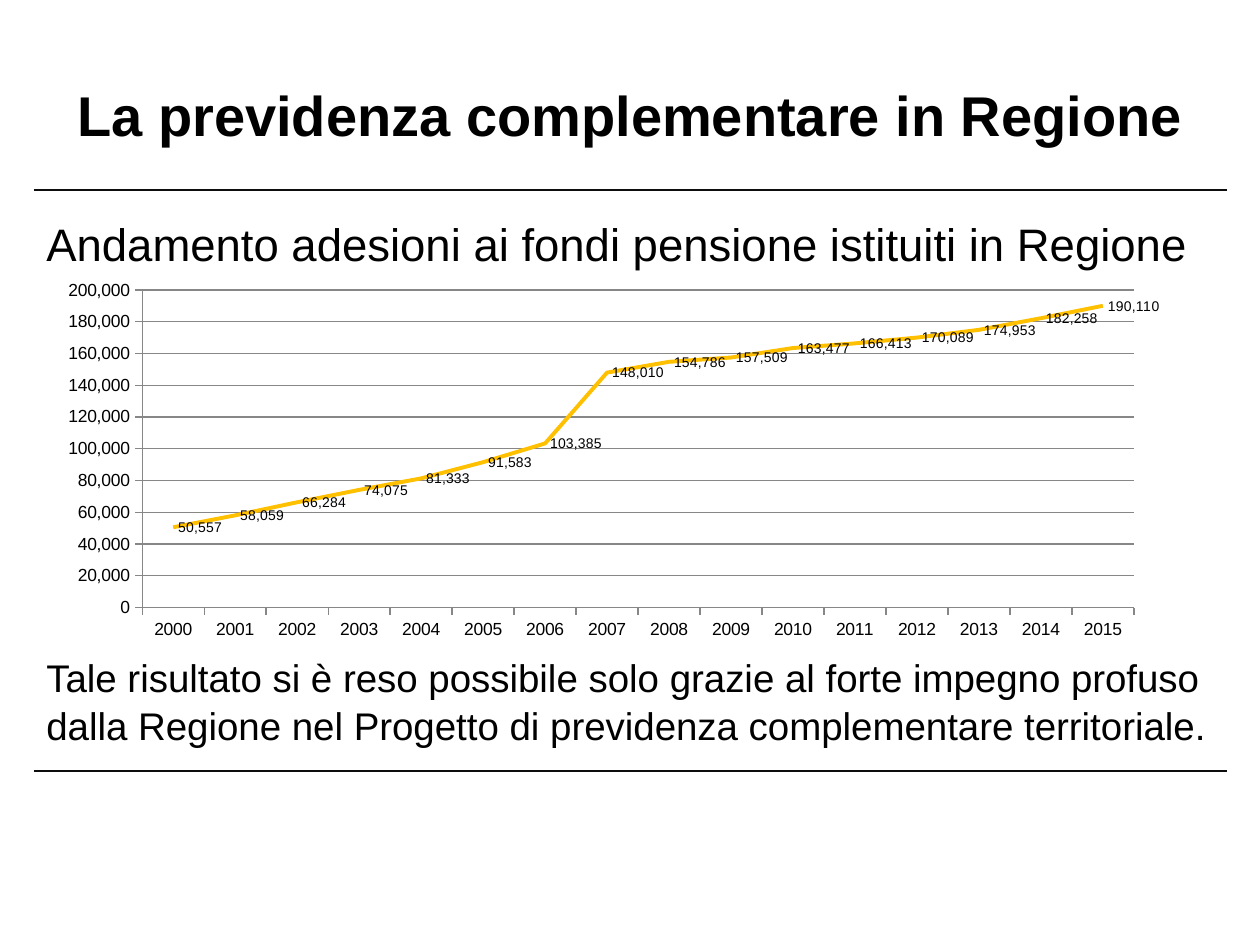
from lxml import etree
from pptx import Presentation
from pptx.chart.data import CategoryChartData
from pptx.dml.color import RGBColor
from pptx.enum.chart import XL_CHART_TYPE, XL_LABEL_POSITION, XL_MARKER_STYLE, XL_TICK_MARK
from pptx.enum.shapes import MSO_CONNECTOR
from pptx.enum.text import MSO_ANCHOR, PP_ALIGN
from pptx.oxml import parse_xml
from pptx.oxml.ns import nsdecls, qn
from pptx.util import Pt

LINE_CHART = XL_CHART_TYPE.LINE
LABEL_RIGHT = XL_LABEL_POSITION.RIGHT
NO_MARKER = XL_MARKER_STYLE.NONE
TICK_OUT = XL_TICK_MARK.OUTSIDE
STRAIGHT = MSO_CONNECTOR.STRAIGHT
TOP, MIDDLE = MSO_ANCHOR.TOP, MSO_ANCHOR.MIDDLE
LEFT, CENTER = PP_ALIGN.LEFT, PP_ALIGN.CENTER

PX = 914400 // 126
FONT = "Arial"
COLORS = {"text": "000000", "rule": "0D0D0D", "axis": "878787", "series": "FFC000"}


def color(name):
    return RGBColor.from_string(COLORS[name])


presentation = Presentation()
presentation.slide_width = 1260 * PX
presentation.slide_height = 945 * PX
slide = presentation.slides.add_slide(presentation.slide_layouts[6])

# Rules above and below the content
for y in (190, 771):
    rule = slide.shapes.add_connector(STRAIGHT, 34 * PX, y * PX, 1227 * PX, y * PX)
    rule.line.color.rgb = color("rule")
    rule.line.width = Pt(0.75)
    etree.SubElement(rule._element.spPr, qn("a:effectLst"))

# Title, subtitle and closing remark
texts = [
    ("La previdenza complementare in Regione",
     (34, 35, 1193, 158), 32, True, CENTER, MIDDLE, 1),
    ("Andamento adesioni ai fondi pensione istituiti in Regione",
     (34, 210, 1226, 64), 26, False, LEFT, TOP, 1),
    ("Tale risultato si è reso possibile solo grazie al forte impegno profuso "
     "dalla Regione nel Progetto di previdenza complementare territoriale.",
     (34, 646, 1226, 112), 22, False, LEFT, TOP, 1.04),
]
for text, box, size, bold, alignment, anchor, spacing in texts:
    shape = slide.shapes.add_textbox(*(length * PX for length in box))
    text_frame = shape.text_frame
    text_frame.word_wrap = True
    text_frame.vertical_anchor = anchor
    text_frame.text = text
    paragraph = text_frame.paragraphs[0]
    paragraph.alignment = alignment
    paragraph.line_spacing = spacing
    font = paragraph.runs[0].font
    font.name, font.size, font.bold = FONT, Pt(size), bold
    font.color.rgb = color("text")

# Membership chart
chart_data = CategoryChartData(number_format="#,##0")
chart_data.categories = [str(year) for year in range(2000, 2016)]
chart_data.add_series("Series 1", [
    50557, 58059, 66284, 74075, 81333, 91583, 103385, 148010,
    154786, 157509, 163477, 166413, 170089, 174953, 182258, 190110,
])
chart = slide.shapes.add_chart(
    LINE_CHART, 54 * PX, 275 * PX, 1106 * PX, 378 * PX, chart_data).chart
chart.has_legend = False
chart.has_title = False
chart.font.name, chart.font.size = FONT, Pt(10)
chart.font.color.rgb = color("text")

# Axes and gridlines
value_axis = chart.value_axis
value_axis.minimum_scale, value_axis.maximum_scale = 0, 200000
value_axis.major_unit = 20000
value_axis.tick_labels.number_format = "#,##0"
value_axis.tick_labels.number_format_is_linked = False
value_axis.has_major_gridlines = True
for axis in (value_axis, chart.category_axis):
    axis.major_tick_mark = TICK_OUT
for lined in (value_axis, chart.category_axis, value_axis.major_gridlines):
    lined.format.line.color.rgb = color("axis")
    lined.format.line.width = Pt(0.75)

# Series line and value labels
plot = chart.plots[0]
plot.vary_by_categories = False
series = plot.series[0]
series.smooth = False
series.marker.style = NO_MARKER
series.format.line.color.rgb = color("series")
series.format.line.width = Pt(2.25)
labels = series.data_labels
labels.show_value = True
labels.position = LABEL_RIGHT
labels.number_format = "#,##0"
labels.number_format_is_linked = False
labels.font.name, labels.font.size = FONT, Pt(8)
labels.font.color.rgb = color("text")

# Fixed inner plot area, as fractions of the chart
plot_area = chart._chartSpace.chart.plotArea
for layout in plot_area.findall(qn("c:layout")):
    plot_area.remove(layout)
plot_area.insert(0, parse_xml(
    f'<c:layout {nsdecls("c")}><c:manualLayout><c:layoutTarget val="inner"/>'
    '<c:xMode val="edge"/><c:yMode val="edge"/><c:x val="0.08"/><c:y val="0.04"/>'
    '<c:w val="0.9"/><c:h val="0.84"/></c:manualLayout></c:layout>'))

presentation.save("out.pptx")
